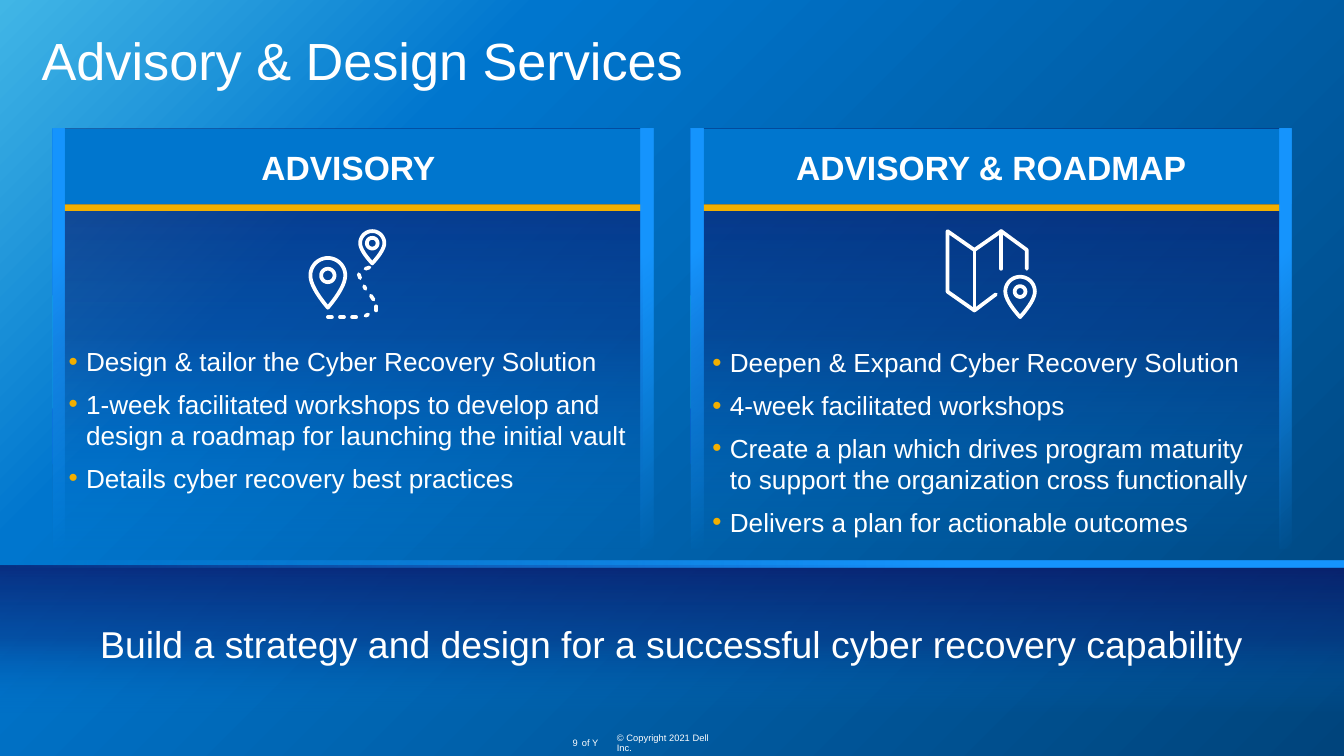
from math import cos, pi, sin

from lxml.etree import SubElement
from pptx import Presentation
from pptx.dml.color import RGBColor
from pptx.enum.shapes import MSO_SHAPE
from pptx.enum.text import MSO_ANCHOR, MSO_AUTO_SIZE, PP_ALIGN
from pptx.oxml.ns import qn
from pptx.util import Inches, Pt

# Content
TITLE = "Advisory & Design Services"
MESSAGE = "Build a strategy and design for a successful cyber recovery capability"
PANELS = [
    ("ADVISORY ", 0.39, (0.45, 2.57, 4.31, 1.11), [
        "Design & tailor the Cyber Recovery Solution",
        "1-week facilitated workshops to develop and design a roadmap "
        "for launching the initial vault",
        "Details cyber recovery best practices",
    ]),
    ("ADVISORY & ROADMAP", 5.14, (5.24, 2.58, 4.23, 1.43), [
        "Deepen & Expand Cyber Recovery Solution",
        "4-week facilitated workshops",
        "Create a plan which drives program maturity to support "
        "the organization cross functionally",
        "Delivers a plan for actionable outcomes",
    ]),
]
FOOTER = [  # text, box, alignment, wrap
    ("© Copyright 2021 Dell Inc.", (4.59, 5.49, 0.75, 0.08), PP_ALIGN.LEFT, True),
    ("9", (4.22, 5.49, 0.08, 0.08), PP_ALIGN.RIGHT, False),
    ("of Y", (4.33, 5.49, 0.12, 0.08), PP_ALIGN.LEFT, False),
]

# Icon geometry: pins are centre x, centre y, radius, tip y, ring radius
PINS = [(2.44, 2.05, 0.13, 2.29, 0.05), (2.77, 1.81, 0.09, 1.96, 0.04),
        (7.59, 2.17, 0.11, 2.36, 0.04)]
ROUTE = [
    [(2.44, 2.36), (2.47, 2.36)], [(2.53, 2.36), (2.56, 2.36)],
    [(2.62, 2.36), (2.65, 2.36)], [(2.72, 2.35), (2.74, 2.34)],
    [(2.8, 2.31), (2.8, 2.28)], [(2.78, 2.23), (2.76, 2.2)],
    [(2.72, 2.15), (2.71, 2.13)], [(2.68, 2.07), (2.67, 2.04)],
    [(2.72, 2), (2.75, 1.99)],
]
MAP = [
    [(7.41, 2.19), (7.25, 2.31), (7.05, 2.17), (7.05, 1.72), (7.25, 1.86),
     (7.45, 1.72), (7.64, 1.86), (7.64, 2)],
    [(7.25, 1.86), (7.25, 2.31)],
    [(7.45, 1.72), (7.45, 2)],
]

# Style
WHITE = RGBColor(0xFF, 0xFF, 0xFF)
BLUE = RGBColor(0x00, 0x76, 0xCE)
GOLD = RGBColor(0xF2, 0xAF, 0x00)
# Gradient stops: position %, colour, opacity %
BACKDROP = [(0, RGBColor(0x41, 0xB6, 0xE6), 100), (26, BLUE, 100),
            (100, RGBColor(0x00, 0x44, 0x7C), 100)]
SHADE = [(0, RGBColor(0x0B, 0x10, 0x62), 70), (50, RGBColor(0x08, 0x2F, 0x82), 50),
         (100, RGBColor(0x00, 0x75, 0xCD), 0)]
SKY = RGBColor(0x17, 0x96, 0xFF)
GLOW = [(29, SKY, 100), (100, SKY, 0)]


def set_gradient(fill, element, stops, angle):
    fill.gradient()
    grad = element.find(".//" + qn("a:gradFill"))
    for child in list(grad):
        grad.remove(child)
    gs_list = SubElement(grad, qn("a:gsLst"))
    for pos, color, opacity in stops:
        gs = SubElement(gs_list, qn("a:gs"), pos=str(pos * 1000))
        clr = SubElement(gs, qn("a:srgbClr"), val=str(color))
        if opacity < 100:
            SubElement(clr, qn("a:alpha"), val=str(opacity * 1000))
    SubElement(grad, qn("a:lin"), ang=str(angle * 60000), scaled="0")


def add_box(box, color=None, stops=None, angle=90):
    sp = slide.shapes.add_shape(MSO_SHAPE.RECTANGLE, *map(Inches, box))
    sp.shadow.inherit = False
    sp.line.fill.background()
    if stops:
        set_gradient(sp.fill, sp.element, stops, angle)
    else:
        sp.fill.solid()
        sp.fill.fore_color.rgb = color
    return sp


def set_text(sp, lines, size, align=PP_ALIGN.LEFT, anchor=MSO_ANCHOR.MIDDLE,
             bold=False, wrap=True, spacing=1.0, bullets=False):
    tf = sp.text_frame
    tf.text = "\n".join(lines)
    tf.auto_size = MSO_AUTO_SIZE.NONE
    tf.word_wrap = wrap
    tf.vertical_anchor = anchor
    tf.margin_left = tf.margin_right = tf.margin_top = tf.margin_bottom = 0
    for i, p in enumerate(tf.paragraphs):
        p.alignment = align
        p.line_spacing = spacing
        p.space_before = Pt(6 if i else 0)
        if bullets:
            pPr = p._p.get_or_add_pPr()
            pPr.set("marL", str(Inches(0.19)))
            pPr.set("indent", str(Inches(-0.13)))
            SubElement(SubElement(pPr, qn("a:buClr")), qn("a:srgbClr"), val=str(GOLD))
            SubElement(pPr, qn("a:buFont"), typeface="Arial")
            SubElement(pPr, qn("a:buChar"), char="•")
        for r in p.runs:
            r.font.name = "Arial"
            r.font.size = Pt(size)
            r.font.bold = bold
            r.font.color.rgb = WHITE


def set_placeholder(ph, box, lines, size, **style):
    ph.left, ph.top, ph.width, ph.height = map(Inches, box)
    set_text(ph, lines, size, anchor=MSO_ANCHOR.TOP, **style)
    slide.shapes.element.append(ph.element)  # bring to front


def add_strokes(contours, closed=False):
    paths = [[(Inches(x), Inches(y)) for x, y in c] for c in contours]
    builder = slide.shapes.build_freeform(*paths[0][0], scale=1.0)
    for i, path in enumerate(paths):
        if i:
            builder.move_to(*path[0])
        builder.add_line_segments(path[1:], close=closed)
    sp = builder.convert_to_shape()
    sp.shadow.inherit = False
    sp.fill.background()
    sp.line.color.rgb = WHITE
    sp.line.width = Pt(2)
    ln = sp.line._get_or_add_ln()
    ln.set("cap", "rnd")
    SubElement(ln, qn("a:round"))


def arc(cx, cy, r, start, end, steps=24):
    angles = [start + (end - start) * i / steps for i in range(steps + 1)]
    return [(cx + r * cos(a), cy + r * sin(a)) for a in angles]


def add_pin(cx, cy, r, tip, ring):
    # Each side bends from the head down to the tip
    bend = cy + 0.35 * (tip - cy)
    side = []
    for i in range(1, 9):
        t = i / 8
        side.append((r * (1 - t * t), (1 - t) ** 2 * cy + 2 * t * (1 - t) * bend + t * t * tip))
    right = [(cx + dx, y) for dx, y in side]
    left = [(cx - dx, y) for dx, y in reversed(side[:-1])]
    add_strokes([arc(cx, cy, r, pi, 2 * pi) + right + left,
                 arc(cx, cy, ring, 0, 2 * pi)], closed=True)


# Widescreen 16:9 slide
prs = Presentation()
prs.slide_width = Inches(10)
prs.slide_height = prs.slide_width * 9 // 16
slide = prs.slides.add_slide(prs.slide_layouts[3])
set_gradient(slide.background.fill, slide.element, BACKDROP, 45)
title, *bodies = list(slide.placeholders)

# Footer
for text, box, align, wrap in FOOTER:
    sp = slide.shapes.add_textbox(*map(Inches, box))
    set_text(sp, [text], 5, align, wrap=wrap, spacing=0.9)

# Panels with header, gold rule, side rails and list
for (heading, x, list_box, items), body in zip(PANELS, bodies):
    add_box((x, 0.96, 4.39, 3.13), stops=SHADE)
    header = add_box((x, 0.96, 4.47, 0.56), BLUE)
    set_text(header, [heading], 18, PP_ALIGN.CENTER, bold=True, wrap=False)
    add_box((x + 0.08, 1.52, 4.31, 0.05), GOLD)
    for rail_x in (x + 4.38, x):
        add_box((rail_x, 0.96, 0.09, 3.12), stops=GLOW, angle=45)
    set_placeholder(body, list_box, items, 14, bullets=True)

# Bottom band
add_box((0, 4.21, 10, 1.09), stops=SHADE)
sp = slide.shapes.add_textbox(Inches(0), Inches(4.22), Inches(10), Inches(1.14))
set_text(sp, [MESSAGE], 20, PP_ALIGN.CENTER)
add_box((0, 4.17, 10, 0.05), stops=GLOW, angle=180)

# Icons
for pin in PINS:
    add_pin(*pin)
add_strokes(ROUTE)
add_strokes(MAP)

set_placeholder(title, (0.31, 0.26, 9.38, 0.42), [TITLE], 28, spacing=0.9)
prs.save("out.pptx")
